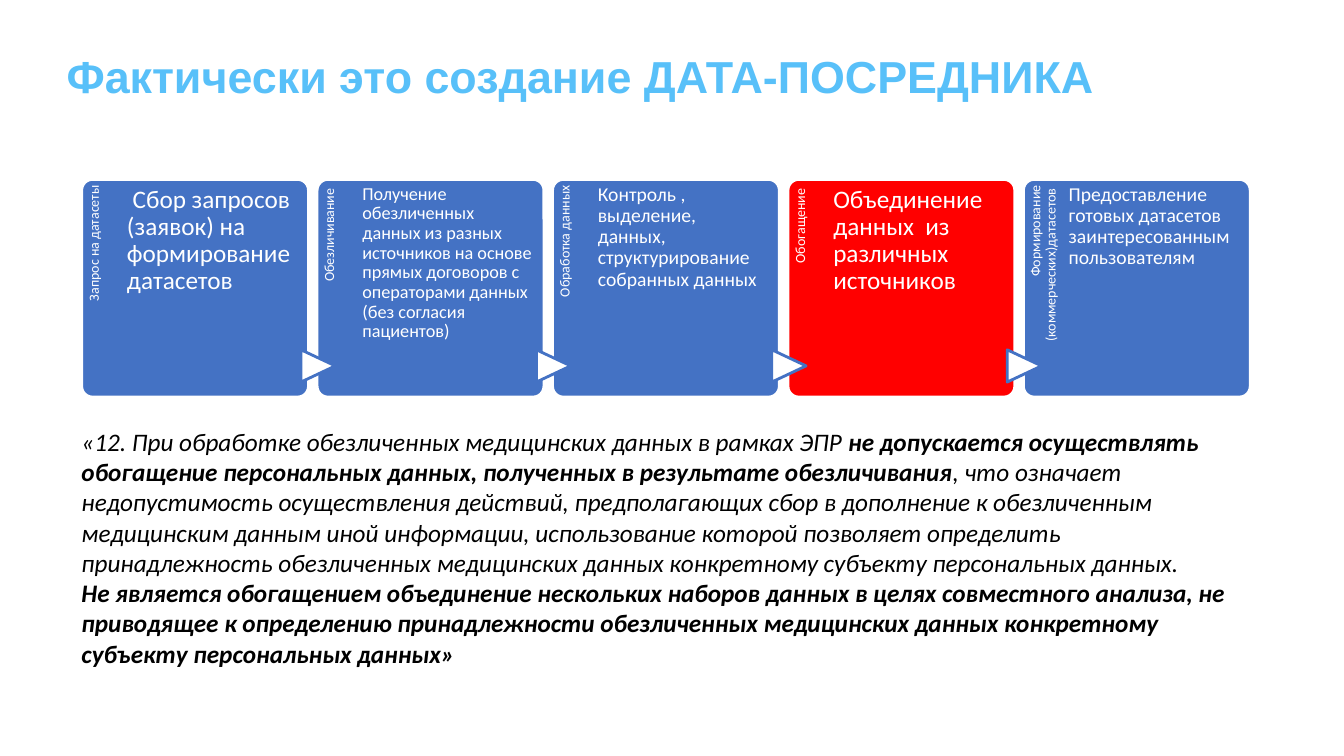
import dataclasses

import pptx
import pptx.dml.color
import pptx.enum.shapes
import pptx.enum.text
import pptx.util

Inches = pptx.util.Inches
Pt = pptx.util.Pt
SHAPE = pptx.enum.shapes.MSO_SHAPE
ALIGN = pptx.enum.text.PP_ALIGN
FIT = pptx.enum.text.MSO_AUTO_SIZE


@dataclasses.dataclass(frozen=True)
class Theme:
    sky: str = "58C0F9"
    blue: str = "4472C4"
    red: str = "FF0000"
    white: str = "FFFFFF"
    black: str = "000000"
    head: str = "Arial"
    text: str = "Calibri"
    title: int = 32
    quote: int = 18
    label: int = 10
    line: int = 2


THEME = Theme()

TITLE = "Фактически это создание ДАТА-ПОСРЕДНИКА"

# Label, body, body size, top inset, fill
STEPS = [
    ("Запрос на датасеты",
     " Сбор запросов  (заявок) на формирование датасетов",
     18, 0.07, THEME.blue),
    ("Обезличивание ",
     "Получение обезличенных данных из разных источников на основе прямых "
     "договоров с операторами данных (без согласия пациентов)",
     13, 0.05, THEME.blue),
    ("Обработка данных",
     "Контроль , выделение, данных, структурирование собранных данных",
     14, 0.05, THEME.blue),
    ("Обогащение ",
     "Объединение данных  из различных источников",
     18, 0.07, THEME.red),
    ("Формирование (коммерческих)датасетов ",
     "Предоставление готовых датасетов заинтересованным пользователям",
     14, 0.05, THEME.blue),
]

# Paragraphs of (text, bold) runs
QUOTE = [
    [("«12. При обработке обезличенных медицинских данных в рамках ЭПР ", False),
     ("не допускается осуществлять обогащение персональных данных, "
      "полученных в результате обезличивания", True),
     (", что означает недопустимость осуществления действий, предполагающих "
      "сбор в дополнение к обезличенным медицинским данным иной информации, "
      "использование которой позволяет определить принадлежность обезличенных "
      "медицинских данных конкретному субъекту персональных данных.", False)],
    [("Не является обогащением объединение нескольких наборов данных в целях "
      "совместного анализа, не приводящее к определению принадлежности "
      "обезличенных медицинских данных конкретному субъекту персональных "
      "данных»", True)],
]


def rgb(code):
    return pptx.dml.color.RGBColor.from_string(code)


def write(shapes, box, paras, size, color, font=THEME.text, italic=False,
          inset=(0.1, 0.05, 0.1, 0.05), align=ALIGN.LEFT, space=0.9):
    """Add a text box; insets run left, top, right, bottom."""
    item = shapes.add_textbox(*map(Inches, box))
    frame = item.text_frame
    frame.word_wrap = True
    for side, gap in zip(("left", "top", "right", "bottom"), inset):
        setattr(frame, "margin_" + side, Inches(gap))
    for n, runs in enumerate(paras):
        para = frame.add_paragraph() if n else frame.paragraphs[0]
        para.alignment, para.line_spacing = align, space
        for text, bold in runs:
            run = para.add_run()
            run.text = text
            style = {"name": font, "size": Pt(size), "bold": bold, "italic": italic}
            for key, value in style.items():
                setattr(run.font, key, value)
            run.font.color.rgb = rgb(color)
    return item


def draw(shapes, kind, box, fill, line):
    item = shapes.add_shape(kind, *map(Inches, box))
    item.shadow.inherit = False
    item.fill.solid()
    item.fill.fore_color.rgb = rgb(fill)
    item.line.color.rgb = rgb(line)
    item.line.width = Pt(THEME.line)
    return item


def add_title(slide, box):
    write(slide.shapes, box, [[(TITLE, True)]], THEME.title, THEME.sky,
          THEME.head, inset=(0.05,) * 4)


def add_step(shapes, box, step, arrow):
    label, body, size, top, fill = step
    x, y, w, h = box
    card = draw(shapes, SHAPE.ROUNDED_RECTANGLE, box, fill, THEME.white)
    card.adjustments[0] = 0.05

    # Upright label along the left edge
    long, thick = 1.76, 0.44
    mid_x, mid_y = x + 0.23, y + 0.89
    side = write(shapes, (mid_x - long / 2, mid_y - thick / 2, long, thick),
                 [[(label, False)]], THEME.label, THEME.white,
                 inset=(0, 0.04, 0.05, 0), align=ALIGN.RIGHT)
    side.rotation = 270

    # Pointer from the previous card
    if arrow:
        tip = draw(shapes, SHAPE.FLOWCHART_EXTRACT,
                   (x - 0.15, y + 1.68, 0.32, 0.34), THEME.white, THEME.blue)
        tip.rotation = 90

    write(shapes, (x + 0.45, y, w * 0.75, h), [[(body, False)]], size,
          THEME.white, inset=(0, top, 0, 0))


def add_flow(slide, box):
    x, y, w, h = box
    wide = 2.25
    pitch = (w - wide) / (len(STEPS) - 1)
    group = slide.shapes.add_group_shape()
    for n, step in enumerate(STEPS):
        add_step(group.shapes, (x + n * pitch, y, wide, h), step, n > 0)


def add_quote(slide, box):
    item = write(slide.shapes, box, QUOTE, THEME.quote, THEME.black,
                 italic=True, space=1.0)
    item.text_frame.auto_size = FIT.SHAPE_TO_FIT_TEXT


def main():
    deck = pptx.Presentation()
    deck.slide_width, deck.slide_height = Inches(13.33), Inches(7.5)
    slide = deck.slides.add_slide(deck.slide_layouts[6])
    add_title(slide, (0.61, 0.49, 11.22, 0.77))
    add_quote(slide, (0.71, 4.18, 11.79, 2.52))
    add_flow(slide, (0.81, 1.78, 11.59, 2.16))
    deck.save("out.pptx")


if __name__ == "__main__":
    main()
